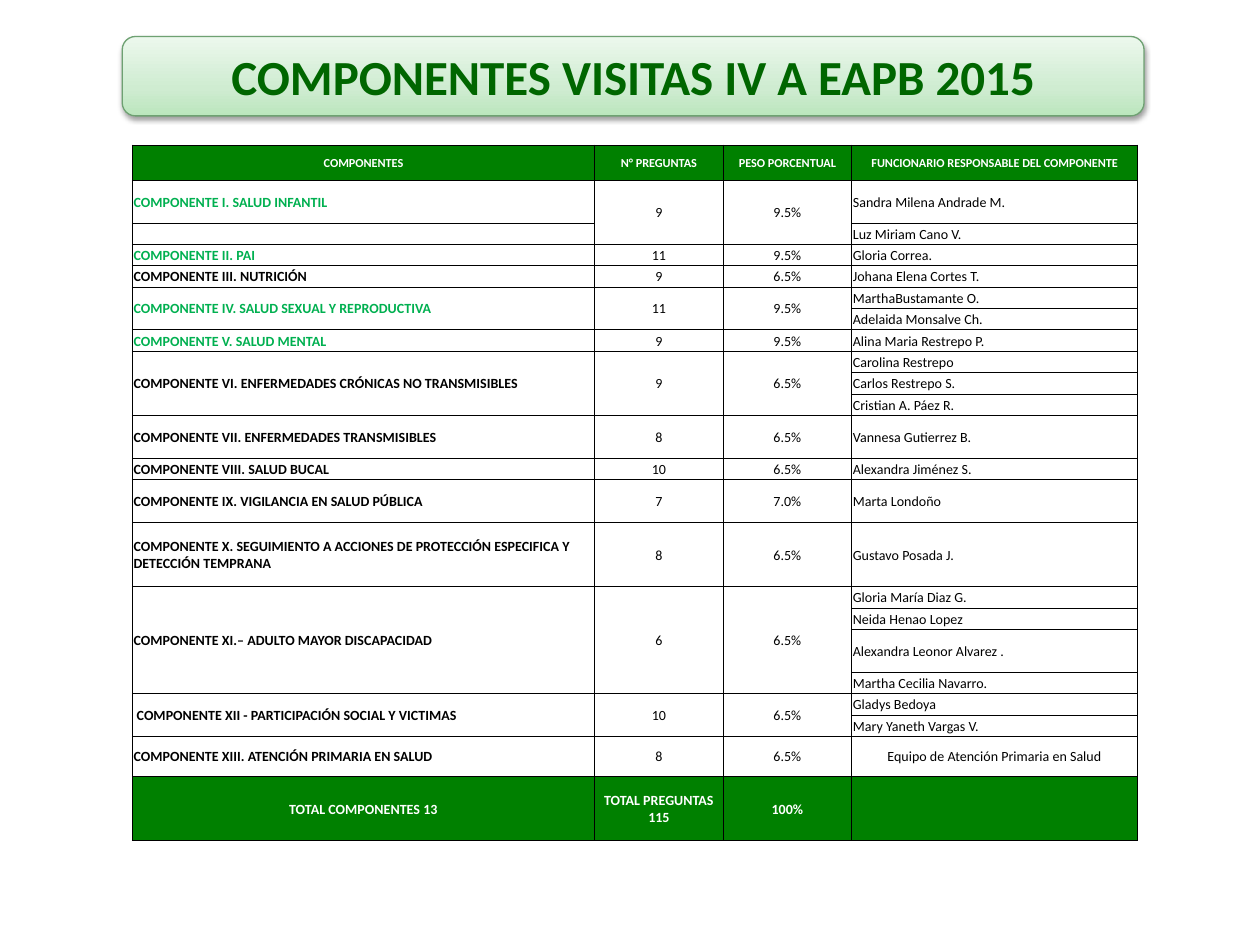
from lxml import etree
from pptx import Presentation
from pptx.dml.color import RGBColor
from pptx.enum import shapes, text
from pptx.oxml import parse_xml
from pptx.oxml.ns import nsdecls, qn
from pptx.util import Inches, Pt

WHITE = RGBColor(0xFF, 0xFF, 0xFF)
BLACK = RGBColor(0, 0, 0)
GREEN = RGBColor(0, 0x80, 0)
LIME = RGBColor(0, 0xB0, 0x50)
DARK = RGBColor(0, 0x66, 0)
EDGE = RGBColor(0x6E, 0xA1, 0x72)
STOPS = [(0, RGBColor(0xBB, 0xE6, 0xBD)), (35, RGBColor(0xCF, 0xEC, 0xD1)),
         (100, RGBColor(0xEC, 0xF8, 0xED))]
FONT = "Calibri"
UNIT = 0.17  # height of one text line in the table
WIDTHS = [3.67, 1.02, 1.02, 2.27]

HEAD = ["COMPONENTES", "N° PREGUNTAS", "PESO PORCENTUAL",
        "FUNCIONARIO RESPONSABLE DEL COMPONENTE"]
TOTAL = ["TOTAL COMPONENTES 13", "TOTAL PREGUNTAS 115", "100%", ""]
# Component, colour, questions, weight, (person, row height) pairs
GROUPS = [
    ("COMPONENTE I. SALUD INFANTIL", LIME, 9, "9.5%",
     [("Sandra Milena Andrade M.", 2 * UNIT), ("Luz Miriam Cano V.", UNIT)]),
    ("COMPONENTE II. PAI", LIME, 11, "9.5%", [("Gloria Correa.", UNIT)]),
    ("COMPONENTE III. NUTRICIÓN", BLACK, 9, "6.5%",
     [("Johana Elena Cortes T.", UNIT)]),
    ("COMPONENTE IV. SALUD SEXUAL Y REPRODUCTIVA", LIME, 11, "9.5%",
     [("MarthaBustamante O.", UNIT), ("Adelaida Monsalve Ch.", UNIT)]),
    ("COMPONENTE V. SALUD MENTAL", LIME, 9, "9.5%",
     [("Alina Maria Restrepo P.", UNIT)]),
    ("COMPONENTE VI. ENFERMEDADES CRÓNICAS NO TRANSMISIBLES", BLACK, 9, "6.5%",
     [("Carolina Restrepo", UNIT), ("Carlos Restrepo S.", UNIT),
      ("Cristian A. Páez R.", UNIT)]),
    ("COMPONENTE VII. ENFERMEDADES TRANSMISIBLES", BLACK, 8, "6.5%",
     [("Vannesa Gutierrez B.", 2 * UNIT)]),
    ("COMPONENTE VIII. SALUD BUCAL", BLACK, 10, "6.5%",
     [("Alexandra Jiménez S.", UNIT)]),
    ("COMPONENTE IX. VIGILANCIA EN SALUD PÚBLICA", BLACK, 7, "7.0%",
     [("Marta Londoño", 2 * UNIT)]),
    ("COMPONENTE X. SEGUIMIENTO A ACCIONES DE PROTECCIÓN ESPECIFICA Y "
     "DETECCIÓN TEMPRANA", BLACK, 8, "6.5%", [("Gustavo Posada J.", 3 * UNIT)]),
    ("COMPONENTE XI.– ADULTO MAYOR DISCAPACIDAD", BLACK, 6, "6.5%",
     [("Gloria María Diaz G.", UNIT), ("Neida Henao Lopez", UNIT),
      ("Alexandra Leonor Alvarez .", 2 * UNIT),
      ("Martha Cecilia Navarro.", UNIT)]),
    (" COMPONENTE XII - PARTICIPACIÓN SOCIAL Y VICTIMAS", BLACK, 10, "6.5%",
     [("Gladys Bedoya", UNIT), ("Mary Yaneth Vargas V.", UNIT)]),
    ("COMPONENTE XIII. ATENCIÓN PRIMARIA EN SALUD", BLACK, 8, "6.5%",
     [("Equipo de Atención Primaria en Salud", 0.32)]),
]


def style(para, size, color, bold, center):
    para.font.name, para.font.size = FONT, Pt(size)
    para.font.color.rgb, para.font.bold = color, bold
    para.alignment = text.PP_ALIGN.CENTER if center else text.PP_ALIGN.LEFT


def banner(slide, left, top, width, height):
    box = slide.shapes.add_shape(
        shapes.MSO_SHAPE.ROUNDED_RECTANGLE,
        Inches(left), Inches(top), Inches(width), Inches(height))
    box.line.color.rgb, box.line.width = EDGE, Pt(0.75)
    # Three-stop gradient, from the bottom up
    box.fill.gradient()
    box.fill.gradient_angle = 90
    stops = box._element.spPr.find(".//" + qn("a:gsLst"))
    for old in list(stops):
        stops.remove(old)
    for pos, color in STOPS:
        stop = etree.SubElement(stops, qn("a:gs"), pos=str(pos * 1000))
        etree.SubElement(stop, qn("a:srgbClr"), val=str(color))
    # Soft shadow below
    box.shadow.inherit = False
    effects = box._element.spPr.find(qn("a:effectLst"))
    effects.append(parse_xml(
        f'<a:outerShdw {nsdecls("a")} blurRad="{Pt(3.1)}" dist="{Pt(1.6)}" '
        'dir="5400000" rotWithShape="0"><a:srgbClr val="000000">'
        '<a:alpha val="38000"/></a:srgbClr></a:outerShdw>'))
    frame = box.text_frame
    frame.word_wrap = True
    frame.vertical_anchor = text.MSO_ANCHOR.MIDDLE
    para = frame.paragraphs[0]
    para.text = "COMPONENTES VISITAS IV A EAPB 2015"
    style(para, 28, DARK, True, True)


def border(cell):
    props = cell._tc.get_or_add_tcPr()
    for spot, side in enumerate(("lnL", "lnR", "lnT", "lnB")):
        props.insert(spot, parse_xml(
            f'<a:{side} {nsdecls("a")} w="{Pt(0.5)}"><a:solidFill>'
            f'<a:srgbClr val="{BLACK}"/></a:solidFill></a:{side}>'))


def write(cell, words, size=8, color=BLACK, bold=False, center=False):
    para = cell.text_frame.paragraphs[0]
    if words:
        para.text = words
    else:  # keeps an empty line as low as a written one
        etree.SubElement(para._p, qn("a:endParaRPr"), sz=str(size * 100))
    style(para, size, color, bold, center)


def matrix(slide, left, top):
    people = [pair for group in GROUPS for pair in group[4]]
    heights = [0.28] + [high for _, high in people] + [3 * UNIT]
    grid = slide.shapes.add_table(
        len(heights), len(WIDTHS), Inches(left), Inches(top),
        Inches(sum(WIDTHS)), Inches(sum(heights))).table
    grid.first_row = grid.horz_banding = False
    for col, wide in zip(grid.columns, WIDTHS):
        col.width = Inches(wide)
    for row, high in zip(grid.rows, heights):
        row.height = Inches(high)
    last = len(heights) - 1

    # Cell frame and fill
    for num, row in enumerate(grid.rows):
        for cell in row.cells:
            cell.margin_left = cell.margin_right = Inches(0.01)
            cell.margin_top, cell.margin_bottom = Inches(0.01), 0
            cell.vertical_anchor = text.MSO_ANCHOR.MIDDLE
            if num in (0, last):
                cell.fill.solid()
                cell.fill.fore_color.rgb = GREEN
            else:
                cell.fill.background()
            border(cell)

    # Header and total rows
    for num, labels, size in ((0, HEAD, 7), (last, TOTAL, 8)):
        for col, label in enumerate(labels):
            write(grid.cell(num, col), label, size, WHITE, True, True)

    # Component groups
    start = 1
    for name, color, count, weight, staff in GROUPS:
        end = start + len(staff) - 1
        split = start == 1  # the first component keeps an empty second cell
        for num in range(start, end + 1):
            for col in range(3):
                if num > start:
                    write(grid.cell(num, col), "")
        for col in range(1 if split else 0, 3):
            if end > start:
                grid.cell(start, col).merge(grid.cell(end, col))
        write(grid.cell(start, 0), name, color=color, bold=True)
        write(grid.cell(start, 1), str(count), center=True)
        write(grid.cell(start, 2), weight, center=True)
        for num, (person, _) in enumerate(staff, start):
            write(grid.cell(num, 3), person, center=num == last - 1)
        start = end + 1


def main():
    deck = Presentation()
    deck.slide_width, deck.slide_height = Inches(10), Inches(7.5)
    slide = deck.slides.add_slide(deck.slide_layouts[6])
    banner(slide, 0.97, 0.29, 8.11, 0.63)
    matrix(slide, 1.05, 1.15)
    deck.save("out.pptx")


if __name__ == "__main__":
    main()
